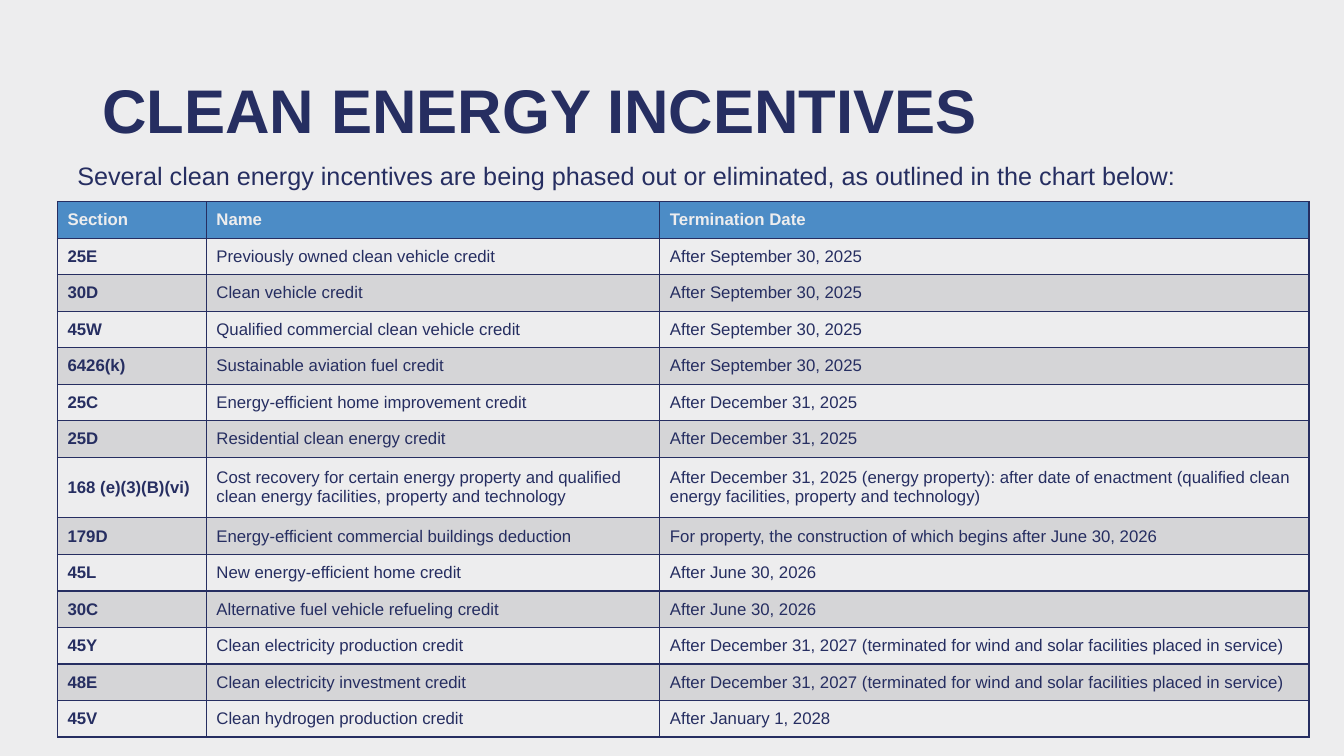
from lxml.etree import SubElement
from pptx import Presentation
from pptx.dml.color import RGBColor
from pptx.enum.text import MSO_ANCHOR
from pptx.oxml.ns import qn
from pptx.util import Cm, Pt

NAVY, BLUE, PALE, GREY = "262E61", "4C8CC6", "EDEDEE", "D5D5D7"


def rgb(value):
    return RGBColor.from_string(value)


def write(tf, text, size, color, bold=False):
    p = tf.paragraphs[0]
    p.text = text
    font = p.runs[0].font
    font.name, font.size, font.bold = "Arial", Pt(size), bold
    font.color.rgb = rgb(color)
    return p


prs = Presentation()
prs.slide_width, prs.slide_height = Cm(33.87), Cm(19.05)
s = prs.slides.add_slide(prs.slide_layouts[6])
s.background.fill.solid()
s.background.fill.fore_color.rgb = rgb(PALE)

headings = [
    ("CLEAN ENERGY INCENTIVES", 44, True, MSO_ANCHOR.MIDDLE, (2.33, 1.01, 29.21, 3.68)),
    ("Several clean energy incentives are being phased out or eliminated, "
     "as outlined in the chart below:", 18, False, MSO_ANCHOR.TOP, (1.7, 3.99, 31.55, 12.09)),
]
for text, size, bold, anchor, box in headings:
    tf = s.shapes.add_textbox(*map(Cm, box)).text_frame
    tf.word_wrap = True
    tf.vertical_anchor = anchor
    write(tf, text, size, NAVY, bold).line_spacing = 0.9

rows = [
    ("Section", "Name", "Termination Date"),
    ("25E", "Previously owned clean vehicle credit", "After September 30, 2025"),
    ("30D", "Clean vehicle credit", "After September 30, 2025"),
    ("45W", "Qualified commercial clean vehicle credit", "After September 30, 2025"),
    ("6426(k)", "Sustainable aviation fuel credit", "After September 30, 2025"),
    ("25C", "Energy-efficient home improvement credit", "After December 31, 2025"),
    ("25D", "Residential clean energy credit", "After December 31, 2025"),
    ("168 (e)(3)(B)(vi)",
     "Cost recovery for certain energy property and qualified clean energy facilities, "
     "property and technology",
     "After December 31, 2025 (energy property): after date of enactment "
     "(qualified clean energy facilities, property and technology)"),
    ("179D", "Energy-efficient commercial buildings deduction",
     "For property, the construction of which begins after June 30, 2026"),
    ("45L", "New energy-efficient home credit", "After June 30, 2026"),
    ("30C", "Alternative fuel vehicle refueling credit", "After June 30, 2026"),
    ("45Y", "Clean electricity production credit",
     "After December 31, 2027 (terminated for wind and solar facilities placed in service)"),
    ("48E", "Clean electricity investment credit",
     "After December 31, 2027 (terminated for wind and solar facilities placed in service)"),
    ("45V", "Clean hydrogen production credit", "After January 1, 2028"),
]
table = s.shapes.add_table(len(rows), 3, Cm(1.45), Cm(5.08), Cm(31.54), Cm(13.49)).table
for column, width in zip(table.columns, (3.75, 11.43, 16.36)):
    column.width = Cm(width)

for i, row in enumerate(rows):
    table.rows[i].height = Cm(1.53 if row[0].startswith("168") else 0.92)
    fill = BLUE if i == 0 else PALE if i % 2 else GREY
    for j, text in enumerate(row):
        cell = table.cell(i, j)
        cell.vertical_anchor = MSO_ANCHOR.MIDDLE
        write(cell.text_frame, text, 12, NAVY if i else PALE, i == 0 or j == 0)
        tcPr = cell._tc.get_or_add_tcPr()
        for side in ("a:lnL", "a:lnR", "a:lnT", "a:lnB"):
            ln = SubElement(tcPr, qn(side), w=str(Pt(1)))
            SubElement(SubElement(ln, qn("a:solidFill")), qn("a:srgbClr"), val=NAVY)
        cell.fill.solid()
        cell.fill.fore_color.rgb = rgb(fill)

prs.save("out.pptx")
